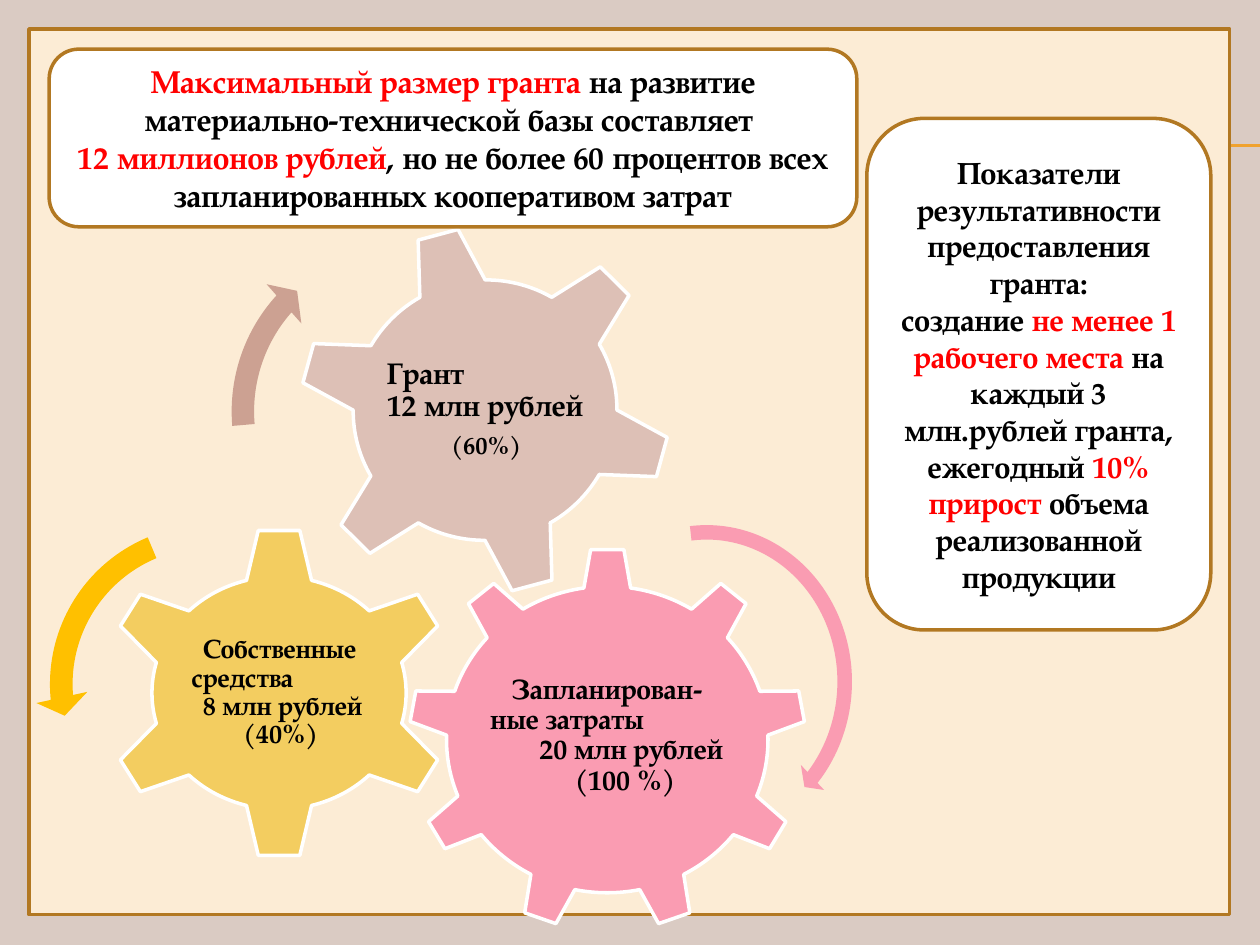
"""Build a slide on the size of a grant, its cost gears and its result targets."""
from dataclasses import dataclass

from lxml import etree
from pptx import Presentation
from pptx import util as u
from pptx.dml.color import RGBColor
from pptx.enum import shapes, text
from pptx.oxml.ns import qn


@dataclass(frozen=True)
class Theme:
    font: str = "TeX Gyre Pagella"
    back: str = "DACBC3"
    cream: str = "FCECD5"
    brown: str = "B27822"
    rule: str = "F0A22E"
    white: str = "FFFFFF"
    black: str = "000000"
    red: str = "FF0000"
    pink: str = "FA9CB2"
    gold: str = "F3CD60"
    amber: str = "FFC000"
    rose: str = "DDC0B6"
    clay: str = "CCA192"
    head: float = 18
    side: float = 17.5
    grant: float = 17
    cost: float = 16
    own: float = 15
    note: float = 14


look = Theme()
kind = shapes.MSO_SHAPE


def draw(form, box, fill, line=None):
    part = slide.shapes.add_shape(form, *map(u.Inches, box))
    part.shadow.inherit = False
    part.fill.solid()
    part.fill.fore_color.rgb = RGBColor.from_string(fill)
    if line:
        part.line.color.rgb = RGBColor.from_string(line)
        part.line.width = u.Pt(2)
    else:
        part.line.fill.background()
    return part


def style(run, size, color):
    run.font.name = look.font
    run.font.size = u.Pt(size)
    run.font.bold = True
    run.font.color.rgb = RGBColor.from_string(color)


deck = Presentation()
deck.slide_width, deck.slide_height = u.Inches(10), u.Inches(7.5)
slide = deck.slides.add_slide(deck.slide_layouts[6])
slide.background.fill.solid()
slide.background.fill.fore_color.rgb = RGBColor.from_string(look.back)

for top in (1.15, 1.16):
    rule = slide.shapes.add_connector(
        shapes.MSO_CONNECTOR.STRAIGHT, u.Inches(0.56), u.Inches(top), u.Inches(10), u.Inches(top))
    rule.line.color.rgb = RGBColor.from_string(look.rule)
    rule.line.width = u.Pt(0.75)
    etree.SubElement(rule._element.spPr, qn("a:effectLst"))

draw(kind.RECTANGLE, (0.23, 0.23, 9.53, 7.03), look.cream, look.brown)

gears = [
    (kind.GEAR_9, (3.24, 4.35, 3.16, 3.04), 0, look.pink, (3.87, 5.06, 1.91, 1.56), [
        ("Запланирован-", 0.17, look.cost), ("ные затраты", 0, look.cost),
        ("20 млн рублей", 0.39, look.cost), ("(100 %)", 0.67, look.cost)]),
    (kind.GEAR_6, (0.81, 4.18, 2.81, 2.64), 0, look.gold, (1.5, 4.85, 1.43, 1.3), [
        ("Собственные", 0.09, look.own), ("средства", 0, look.own),
        ("8 млн рублей", 0.09, look.own), ("(40%)", 0.41, look.own)]),
    (kind.GEAR_6, (2.36, 1.78, 2.98, 2.95), 345, look.rose, (3.02, 2.42, 1.67, 1.66), [
        ("Грант", 0.03, look.grant), ("12 млн рублей", 0.03, look.grant),
        ("(60%)", 0.54, look.note)]),
]
for form, box, turn, fill, area, lines in gears:
    gear = draw(form, box, fill, look.white)
    gear.rotation = turn
    frame = slide.shapes.add_textbox(*map(u.Inches, area)).text_frame
    frame.word_wrap = True
    frame.vertical_anchor = text.MSO_ANCHOR.MIDDLE
    frame.margin_left = frame.margin_right = u.Inches(0.02)
    frame.margin_top = frame.margin_bottom = u.Inches(0.02)
    frame.text = "\n".join(words for words, shift, size in lines)
    for para, (words, shift, size) in zip(frame.paragraphs, lines):
        para.alignment = text.PP_ALIGN.LEFT
        para.line_spacing = 0.9
        para.space_before = u.Pt(6 if size == look.note else 0)
        para._p.get_or_add_pPr().set("marL", str(u.Inches(shift)))
        style(para.runs[0], size, look.black)

arrows = [
    (kind.CIRCULAR_ARROW, (4.38, 4.09, 2.46, 2.64), look.pink, 4.7, (4.98, 42.19, 263.82), 5.5),
    (kind.LEFT_CIRCULAR_ARROW, (0.28, 4.05, 2.76, 2.76), look.amber, 6.5, (7.17, 174.82, 247.3), 7.5),
    (kind.CIRCULAR_ARROW, (1.72, 1.78, 2.97, 2.97), look.clay, 6, (6.57, 221.9, 175.14), 7),
]
for form, box, fill, thick, angles, tip in arrows:
    arrow = draw(form, box, fill)
    values = [thick / 100, *(angle * 0.6 for angle in angles), tip / 100]
    for index, value in enumerate(values):
        arrow.adjustments[index] = value

cards = [
    ((0.39, 0.39, 6.41, 1.41), look.head, [
        [("Максимальный размер гранта ", look.red),
         ("на развитие материально-технической базы составляет ", look.black)],
        [("12 миллионов рублей", look.red),
         (", но не более 60 процентов всех запланированных кооперативом затрат", look.black)]]),
    ((6.88, 0.94, 2.73, 4.06), look.side, [
        [("Показатели результативности предоставления гранта:", look.black)],
        [("создание ", look.black), ("не менее 1 рабочего места", look.red),
         (" на каждый 3 млн.рублей гранта,", look.black)],
        [("ежегодный ", look.black), ("10% прирост ", look.red),
         ("объема реализованной продукции", look.black)]]),
]
for box, size, paras in cards:
    frame = draw(kind.ROUNDED_RECTANGLE, box, look.white, look.brown).text_frame
    frame.word_wrap = True
    frame.vertical_anchor = text.MSO_ANCHOR.MIDDLE
    frame.text = "\n" * (len(paras) - 1)
    for para, parts in zip(frame.paragraphs, paras):
        para.alignment = text.PP_ALIGN.CENTER
        for words, color in parts:
            run = para.add_run()
            run.text = words
            style(run, size, color)

deck.save("out.pptx")
